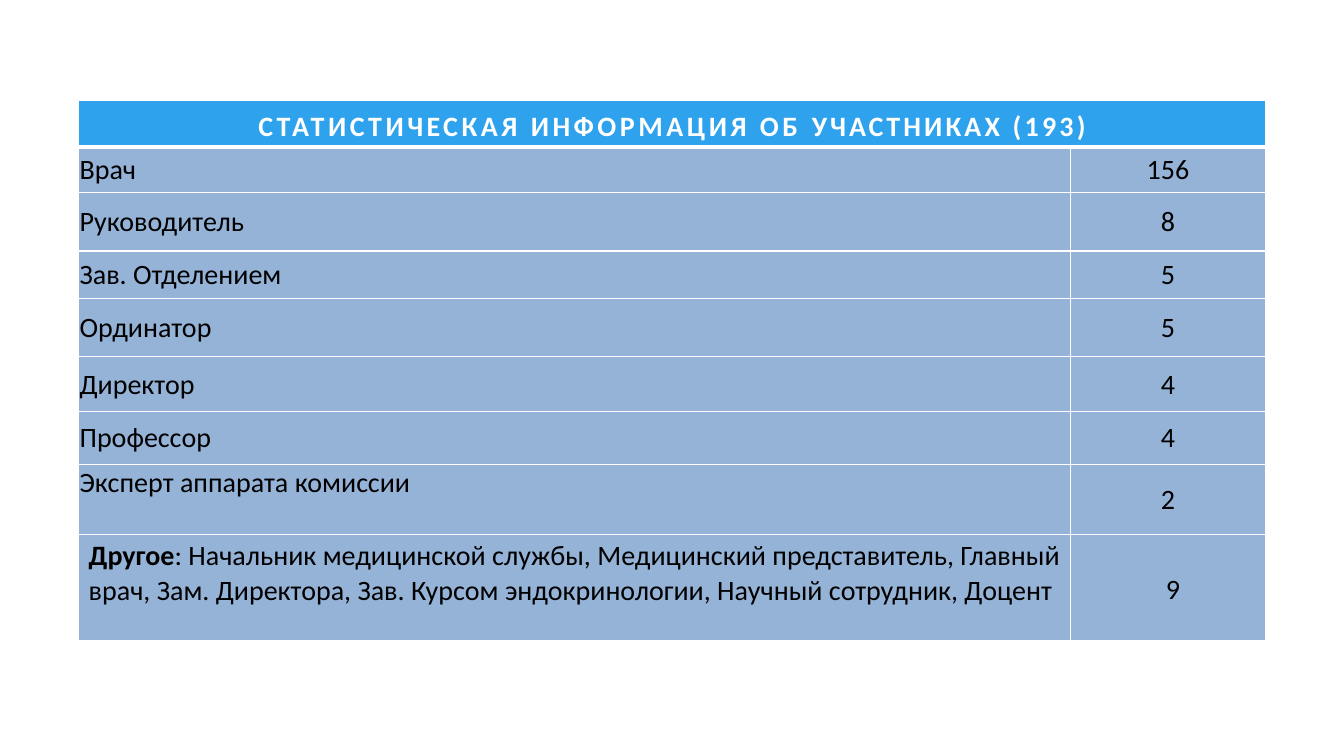
from lxml import etree
from pptx import Presentation, util as u
from pptx.dml.color import RGBColor
from pptx.enum import text
from pptx.oxml.ns import qn

HEADER = [("СТАТИСТИЧЕСКАЯ ИНФОРМАЦИЯ ОБ ", True, 250), ("УЧАСТНИКАХ ", True, 220), ("(193)", True, 230)]
ROLES = [
    ("Врач", 156, 0.45),
    ("Руководитель", 8, 0.58),
    ("Зав. Отделением", 5, 0.47),
    ("Ординатор", 5, 0.58),
    ("Директор", 4, 0.54),
    ("Профессор", 4, 0.53),
    ("Эксперт аппарата комиссии", 2, 0.69),
]
OTHER = [
    ("Другое", True, 0),
    (": Начальник медицинской службы, Медицинский представитель, Главный врач, "
     "Зам. Директора, Зав. Курсом эндокринологии, Научный сотрудник, Доцент", False, 0),
]
OTHER_COUNT = 9
COLS = (9.84, 1.93)
HEADER_H, OTHER_H = 0.46, 1.06
LEFT, TOP = 0.78, 1
BLUE, PALE, WHITE, BLACK = "2EA2ED", "95B3D7", "FFFFFF", "000000"
LIST_INSETS, HEADER_INSETS, OTHER_INSETS = (0.01, 0.01, 0.01, 0), (0, 0.05, 0, 0), (0.1, 0.05, 0, 0)
MIDDLE, UPPER = text.MSO_ANCHOR.MIDDLE, text.MSO_ANCHOR.TOP
CENTER, START = text.PP_ALIGN.CENTER, text.PP_ALIGN.LEFT


def rgb(value):
    """Return the colour of a hex string."""
    return RGBColor.from_string(value)


def set_borders(cell, top, bottom):
    """Draw white cell borders with the given top and bottom widths in points."""
    tcPr = cell._tc.get_or_add_tcPr()
    for side, width in {"L": 1, "R": 1, "T": top, "B": bottom}.items():
        ln = etree.SubElement(tcPr, qn(f"a:ln{side}"), w=str(u.Pt(width)))
        fill = etree.SubElement(ln, qn("a:solidFill"))
        etree.SubElement(fill, qn("a:srgbClr"), val=WHITE)


def fill_cell(cell, runs, color, back, align, insets, anchor=MIDDLE):
    """Write formatted runs into a cell and set its fill and layout."""
    cell.fill.solid()
    cell.fill.fore_color.rgb = rgb(back)
    cell.vertical_anchor = anchor
    for side, inset in zip(("left", "top", "right", "bottom"), insets):
        setattr(cell, f"margin_{side}", u.Inches(inset))
    p = cell.text_frame.paragraphs[0]
    p.alignment = align
    for words, bold, spacing in runs:
        r = p.add_run()
        r.text = words
        for name, value in {"size": u.Pt(20), "name": "Calibri", "bold": bold}.items():
            setattr(r.font, name, value)
        r.font.color.rgb = rgb(color)
        r._r.get_or_add_rPr().set("spc", str(spacing))


def main():
    """Build the participant statistics slide."""
    prs = Presentation()
    prs.slide_width, prs.slide_height = u.Inches(13.33), u.Inches(7.5)
    s = prs.slides.add_slide(prs.slide_layouts[6])
    heights = [HEADER_H, *(height for _, _, height in ROLES), OTHER_H]
    tbl = s.shapes.add_table(len(heights), len(COLS), u.Inches(LEFT), u.Inches(TOP),
                             u.Inches(sum(COLS)), u.Inches(sum(heights))).table
    for col, width in zip(tbl.columns, COLS):
        col.width = u.Inches(width)
    for i, (row, height) in enumerate(zip(tbl.rows, heights)):
        row.height = u.Inches(height)
        for cell in row.cells:
            set_borders(cell, 3 if i == 1 else 1, 3 if i == 0 else 1)

    tbl.cell(0, 0).merge(tbl.cell(0, 1))
    fill_cell(tbl.cell(0, 0), HEADER, WHITE, BLUE, CENTER, HEADER_INSETS)
    body = [([(role, False, 0)], count, LIST_INSETS) for role, count, _ in ROLES]
    body.append((OTHER, OTHER_COUNT, OTHER_INSETS))
    for i, (runs, count, insets) in enumerate(body, 1):
        anchor = UPPER if i >= len(ROLES) else MIDDLE
        fill_cell(tbl.cell(i, 0), runs, BLACK, PALE, START, insets, anchor)
        fill_cell(tbl.cell(i, 1), [(str(count), False, 0)], BLACK, PALE, CENTER, insets)
    prs.save("out.pptx")


if __name__ == "__main__":
    main()
